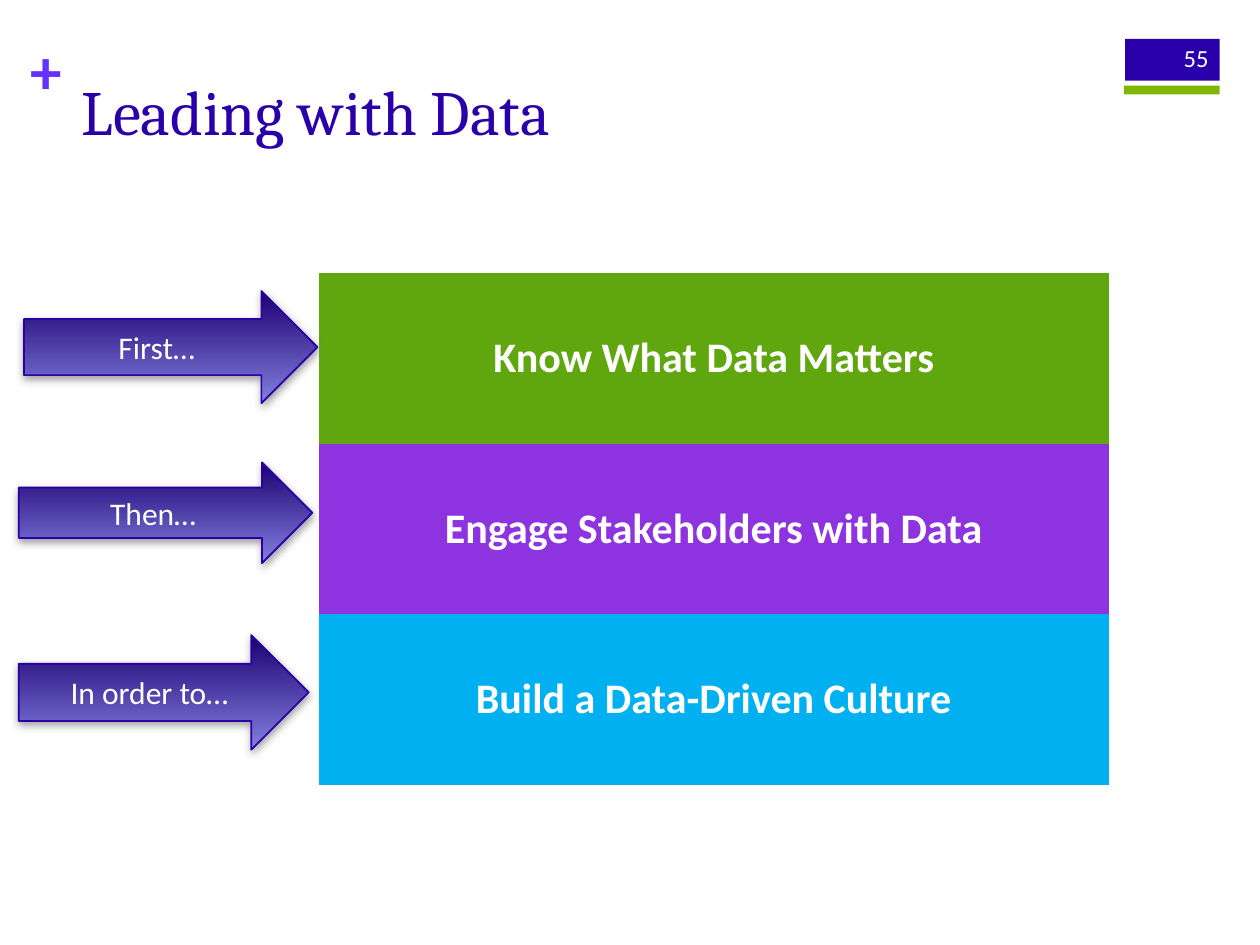
import lxml.etree
import pptx
import pptx.dml.color
import pptx.enum.shapes
import pptx.enum.text
import pptx.oxml
import pptx.oxml.ns
import pptx.util

Inches = pptx.util.Inches
Pt = pptx.util.Pt
ALIGN = pptx.enum.text.PP_ALIGN
MIDDLE = pptx.enum.text.MSO_ANCHOR.MIDDLE
SHAPES = pptx.enum.shapes.MSO_SHAPE
NO_GRID_STYLE = "{2D5ABB26-0587-4C30-8999-92F81FD0307C}"
INDIGO = "2900A9"
WHITE = "FFFFFF"


def colour(value):
    return pptx.dml.color.RGBColor.from_string(value)


def write(frame, text, size, value, font="Calibri", bold=False, align=ALIGN.LEFT):
    frame.word_wrap = True
    para = frame.paragraphs[0]
    para.alignment = align
    span = para.add_run()
    span.text = text
    span.font.size = Pt(size)
    span.font.name = font
    span.font.bold = bold
    span.font.color.rgb = colour(value)


def add_text(page, box, *content, **style):
    frame = page.shapes.add_textbox(*map(Inches, box)).text_frame
    write(frame, *content, **style)
    return frame


def add_block(page, box, value):
    block = page.shapes.add_shape(SHAPES.RECTANGLE, *map(Inches, box))
    block.shadow.inherit = False
    block.fill.solid()
    block.fill.fore_color.rgb = colour(value)
    block.line.fill.background()


def add_header(page, box):
    left, top, width, height = box
    add_block(page, (left + 8.69, top + 0.06, 0.75, 0.33), INDIGO)
    plus = add_text(page, (left, top, 0.29, 0.61), "+", 36, "6432FF", bold=True)
    plus.margin_left = plus.margin_right = plus.margin_top = plus.margin_bottom = 0
    plus.word_wrap = False
    add_block(page, (left + 8.68, top + 0.43, 0.76, 0.07), "80B606")
    number = add_text(page, (left + 8.84, top + 0.01, 0.61, 0.4), "55", 14, WHITE, align=ALIGN.RIGHT)
    number.vertical_anchor = MIDDLE
    add_text(page, (left + 0.31, top + 0.28, 8.26, height - 0.28),
             "Leading with Data", 36, INDIGO, font="Cambria")


def add_steps(page, box, steps):
    frame = page.shapes.add_table(len(steps), 1, *map(Inches, box))
    table = frame.table
    table.first_row = table.horz_banding = False
    table._tbl.tblPr.find(pptx.oxml.ns.qn("a:tableStyleId")).text = NO_GRID_STYLE
    for row, (text, value) in zip(table.rows, steps):
        row.height = Inches(box[3] / len(steps))
        cell = row.cells[0]
        cell.fill.solid()
        cell.fill.fore_color.rgb = colour(value)
        cell.vertical_anchor = MIDDLE
        cell.margin_left = cell.margin_right = Inches(0.17)
        write(cell.text_frame, text, 24, WHITE, bold=True, align=ALIGN.CENTER)


def add_soft_shadow(shape):
    shape.shadow.inherit = False
    effects = shape._element.spPr.find(pptx.oxml.ns.qn("a:effectLst"))
    effects.append(pptx.oxml.parse_xml(
        f'<a:outerShdw {pptx.oxml.ns.nsdecls("a")} blurRad="{Pt(5)}" dist="{Pt(2)}" '
        'dir="5400000" rotWithShape="0"><a:srgbClr val="808080">'
        '<a:alpha val="75000"/></a:srgbClr></a:outerShdw>'))


def add_arrow(page, box, text):
    arrow = page.shapes.add_shape(SHAPES.RIGHT_ARROW, *map(Inches, box))
    arrow.fill.gradient()
    arrow.fill.gradient_angle = 270
    for stop, value in zip(arrow.fill.gradient_stops, ("1C0071", "837FE0")):
        stop.color.rgb = colour(value)
    arrow.line.color.rgb = colour("2800A5")
    arrow.line.width = Pt(1)
    add_soft_shadow(arrow)
    arrow.text_frame.vertical_anchor = MIDDLE
    write(arrow.text_frame, text, 18, WHITE, align=ALIGN.CENTER)


def main():
    deck = pptx.Presentation()
    deck.slide_width, deck.slide_height = Inches(10), Inches(7.5)
    page = deck.slides.add_slide(deck.slide_layouts[6])
    add_header(page, (0.24, 0.25, 9.45, 1.5))
    add_steps(page, (2.53, 2.17, 6.27, 4.06), [
        ("Know What Data Matters", "60A60E"),
        ("Engage Stakeholders with Data", "8D34E0"),
        ("Build a Data-Driven Culture", "00B0F0"),
    ])
    for box, text in [
        ((0.15, 3.67, 2.33, 0.8), "Then…"),
        ((0.19, 2.31, 2.33, 0.89), "First…"),
        ((0.15, 5.04, 2.3, 0.91), "In order to…"),
    ]:
        add_arrow(page, box, text)
    deck.save("out.pptx")


if __name__ == "__main__":
    main()
